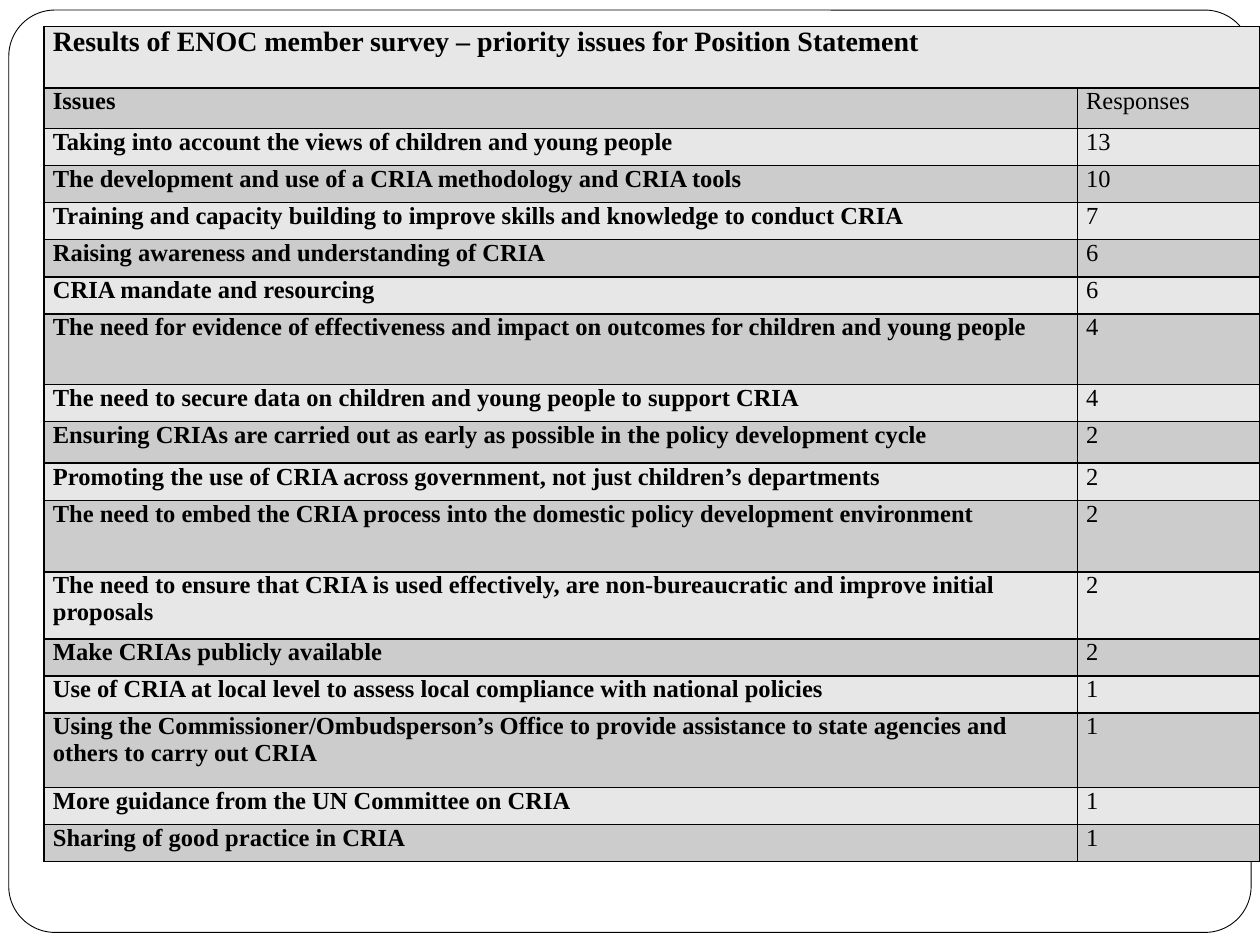
from pptx import Presentation
from pptx.dml.color import RGBColor
from pptx.enum.shapes import MSO_SHAPE as Shape
from pptx.oxml import parse_xml
from pptx.oxml.ns import nsdecls
from pptx.util import Inches, Pt


def color(value):
    return RGBColor.from_string(value)


def style_cell(cell, fill, size, bold):
    """Fill, margins, font and thin black borders of one cell."""
    cell.margin_left = cell.margin_right = Inches(0.07)
    cell.margin_top = cell.margin_bottom = 0
    for paragraph in cell.text_frame.paragraphs:
        for run in paragraph.runs:
            run.font.name = "Times New Roman"
            run.font.size = Pt(size)
            run.font.bold = bold
            run.font.color.rgb = color("000000")
    properties = cell._tc.get_or_add_tcPr()
    for side in ("lnL", "lnR", "lnT", "lnB"):
        properties.append(parse_xml(
            f'<a:{side} {nsdecls("a")} w="{Pt(1)}"><a:solidFill>'
            f'<a:srgbClr val="000000"/></a:solidFill></a:{side}>'))
    cell.fill.solid()
    cell.fill.fore_color.rgb = color(fill)


title = "Results of ENOC member survey – priority issues for Position Statement"
# Issue, responses, row height (None for a plain one-line row)
survey = [
    ("Issues", "Responses", 0.32),
    ("Taking into account the views of children and young people", "13", None),
    ("The development and use of a CRIA methodology and CRIA tools", "10", None),
    ("Training and capacity building to improve skills and knowledge to conduct CRIA", "7", None),
    ("Raising awareness and understanding of CRIA", "6", None),
    ("CRIA mandate and resourcing", "6", None),
    ("The need for evidence of effectiveness and impact on outcomes for children and young people", "4", 0.56),
    ("The need to secure data on children and young people to support CRIA", "4", None),
    ("Ensuring CRIAs are carried out as early as possible in the policy development cycle", "2", 0.33),
    ("Promoting the use of CRIA across government, not just children’s departments", "2", None),
    ("The need to embed the CRIA process into the domestic policy development environment", "2", 0.57),
    ("The need to ensure that CRIA is used effectively, are non-bureaucratic and improve initial proposals",
     "2", 0.53),
    ("Make CRIAs publicly available", "2", None),
    ("Use of CRIA at local level to assess local compliance with national policies", "1", None),
    ("Using the Commissioner/Ombudsperson’s Office to provide assistance to state agencies and "
     "others to carry out CRIA", "1", 0.59),
    ("More guidance from the UN Committee on CRIA", "1", None),
    ("Sharing of good practice in CRIA", "1", None),
]

prs = Presentation()
prs.slide_width, prs.slide_height = Inches(10), Inches(7.5)
slide = prs.slides.add_slide(prs.slide_layouts[6])

# Rounded frame around the page
frame = slide.shapes.add_shape(
    Shape.ROUNDED_RECTANGLE, Inches(0.07), Inches(0.08), Inches(9.86), Inches(7.32))
frame.adjustments[0] = 0.05
frame.shadow.inherit = False
frame.fill.solid()
frame.fill.fore_color.rgb = color("FFFFFF")
frame.line.color.rgb = color("000000")
frame.line.width = Pt(0.5)

# Survey table: plain rows share the height the others leave
table_height = 6.63
heights = [0.49] + [height for _, _, height in survey]
fixed = [height for height in heights if height]
plain_height = (table_height - sum(fixed)) / (len(heights) - len(fixed))

table = slide.shapes.add_table(
    len(heights), 2, Inches(0.35), Inches(0.21), Inches(9.65), Inches(table_height)).table
table.columns[0].width = Inches(8.2)
table.columns[1].width = Inches(1.45)
for row, height in zip(table.rows, heights):
    row.height = Inches(height or plain_height)

# Title row across both columns
table.cell(0, 0).merge(table.cell(0, 1))
table.cell(0, 0).text_frame.text = title
for cell in table.rows[0].cells:
    style_cell(cell, "E7E7E7", 16, True)

# Issues and response counts in alternating bands
for number, (issue, responses, _) in enumerate(survey, start=1):
    band = "CCCCCC" if number % 2 else "E7E7E7"
    for column, text in enumerate((issue, responses)):
        cell = table.cell(number, column)
        cell.text_frame.text = text
        style_cell(cell, band, 14, column == 0)

prs.save("out.pptx")
